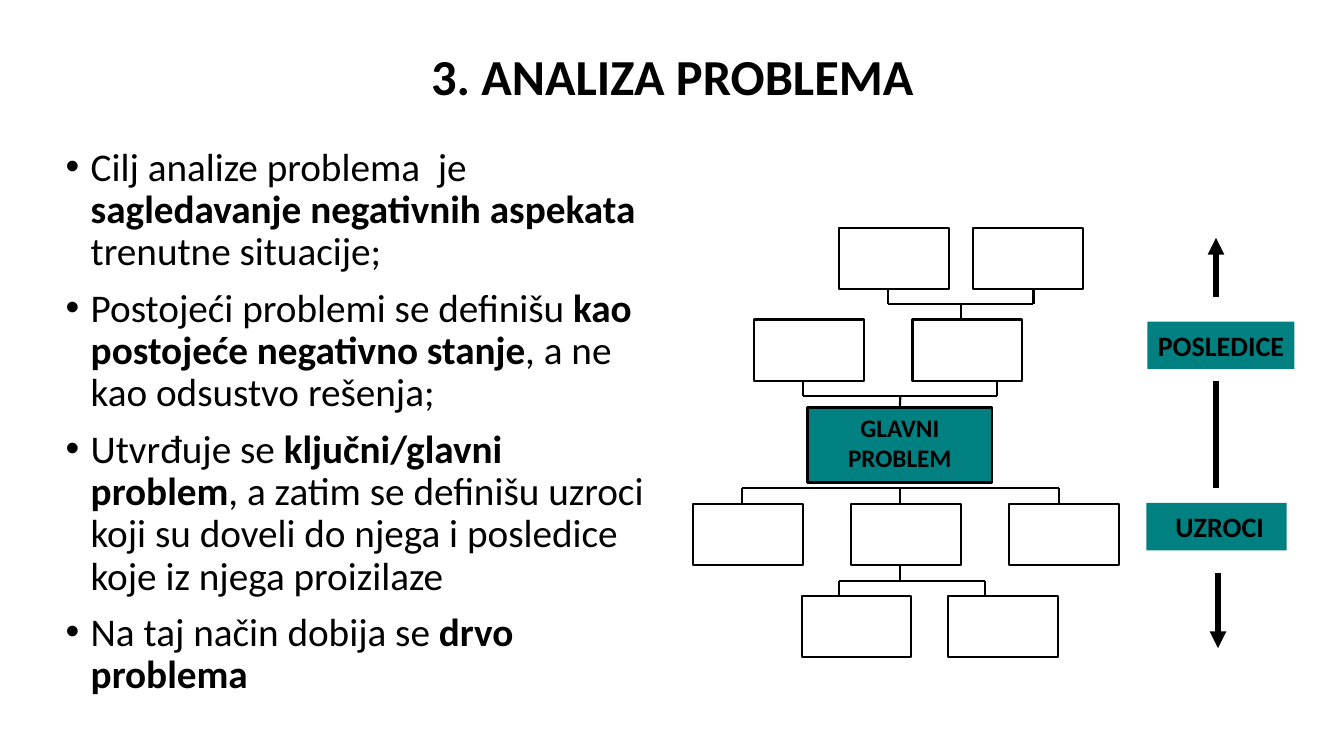
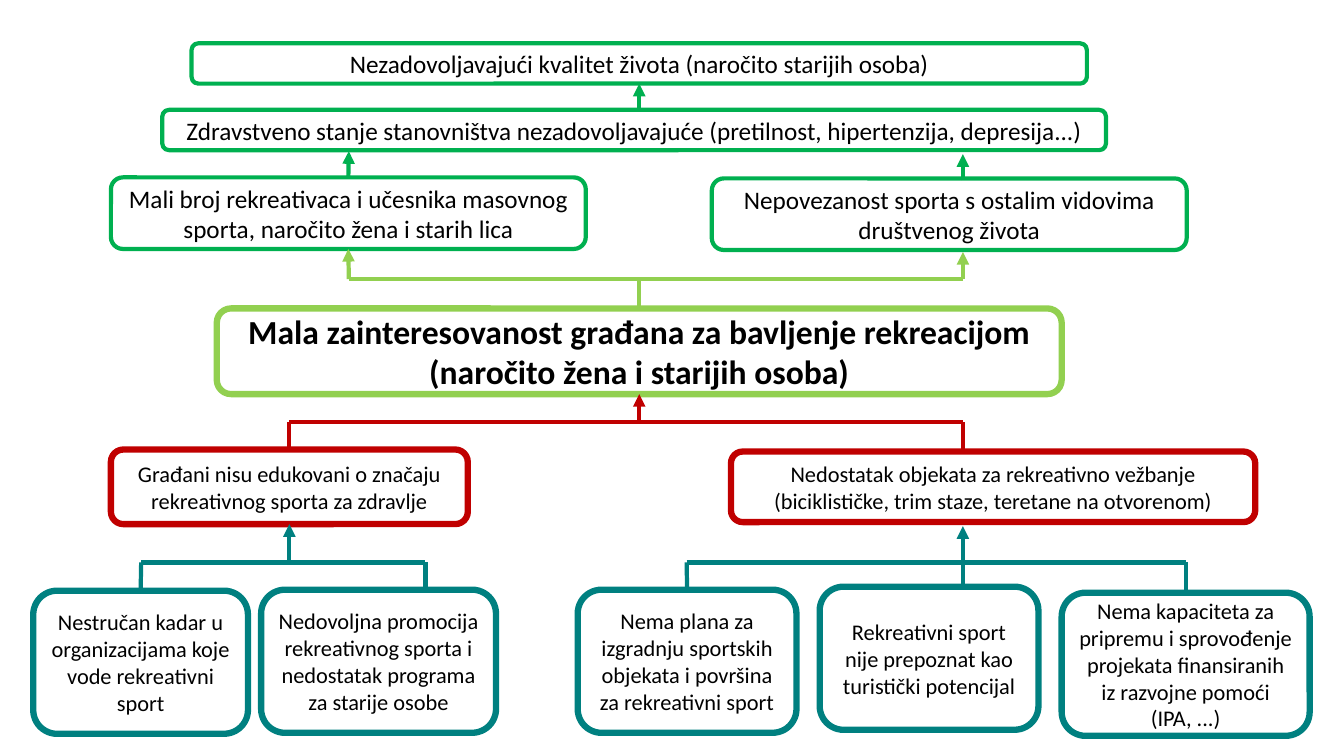
from pptx import Presentation
from pptx.dml.color import RGBColor
from pptx.enum.shapes import MSO_CONNECTOR, MSO_SHAPE, MSO_SHAPE_TYPE
from pptx.enum.text import MSO_ANCHOR, MSO_AUTO_SIZE, PP_ALIGN
from pptx.oxml.ns import qn
from pptx.util import Inches, Pt
from lxml.etree import SubElement

COLORS = {
    "black": "000000",
    "white": "FFFFFF",
    "teal": "008080",
    "red": "C00000",
    "lime": "92D050",
    "green": "00B050",
}
FONT = "Calibri"
JOIN_DISTANCE = Inches(0.045)


def add_box(page, kind, place, text="", fill=None, line=None, width=1.5, size=18, bold=False):
    box = page.shapes.add_shape(kind, *[Inches(value) for value in place])
    box.shadow.inherit = False
    if fill:
        box.fill.solid()
        box.fill.fore_color.rgb = RGBColor.from_string(COLORS[fill])
    else:
        box.fill.background()
    if line:
        box.line.color.rgb = RGBColor.from_string(COLORS[line])
        box.line.width = Pt(width)
    else:
        box.line.fill.background()
    if text:
        box.text_frame.text = text
        for para in box.text_frame.paragraphs:
            para.alignment = PP_ALIGN.CENTER
            para.font.name = FONT
            para.font.size = Pt(size)
            para.font.bold = bold
            para.font.color.rgb = RGBColor.from_string(COLORS["black"])
    return box


def add_line(page, start, end, color, width, arrow=False):
    ends = [Inches(value) for value in (*start, *end)]
    line = page.shapes.add_connector(MSO_CONNECTOR.STRAIGHT, *ends)
    line.line.color.rgb = RGBColor.from_string(COLORS[color])
    line.line.width = Pt(width)
    properties = line._element.spPr
    if arrow:
        SubElement(properties.find(qn("a:ln")), qn("a:tailEnd"), type="triangle")
    SubElement(properties, qn("a:effectLst"))
    for box in page.shapes:
        if box.shape_type != MSO_SHAPE_TYPE.AUTO_SHAPE:
            continue
        middle = box.left + box.width // 2
        for site, side in ((0, box.top), (2, box.top + box.height)):
            for x, y, connect in ((*ends[:2], line.begin_connect), (*ends[2:], line.end_connect)):
                if abs(x - middle) < JOIN_DISTANCE and abs(y - side) < JOIN_DISTANCE:
                    connect(box, site)


deck = Presentation()
deck.slide_width = Inches(13.33)
deck.slide_height = Inches(7.5)
analysis = deck.slides.add_slide(deck.slide_layouts[1])
tree = deck.slides.add_slide(deck.slide_layouts[6])

title, body = analysis.placeholders
for holder, place in ((title, (0.92, 0.4, 11.5, 0.78)), (body, (0.55, 1.41, 5.95, 5.7))):
    holder.left, holder.top, holder.width, holder.height = [Inches(value) for value in place]
    holder.text_frame.auto_size = MSO_AUTO_SIZE.NONE

title.text_frame.text = "3. ANALIZA PROBLEMA"
title.text_frame.vertical_anchor = MSO_ANCHOR.MIDDLE
heading = title.text_frame.paragraphs[0]
heading.alignment = PP_ALIGN.CENTER
heading.line_spacing = 0.9
heading.font.name = FONT
heading.font.size = Pt(36)
heading.font.bold = True
heading.font.color.rgb = RGBColor.from_string(COLORS["black"])

points = [
    ("Cilj analize problema  je ", "sagledavanje negativnih aspekata", " trenutne situacije;"),
    ("Postojeći problemi se definišu ", "kao postojeće negativno stanje", ", a ne kao odsustvo rešenja;"),
    (
        "Utvrđuje se ",
        "ključni/glavni problem",
        ", a zatim se definišu uzroci koji su doveli do njega i posledice koje iz njega proizilaze",
    ),
    ("Na taj način dobija se ", "drvo problema"),
]
for number, parts in enumerate(points):
    para = body.text_frame.add_paragraph() if number else body.text_frame.paragraphs[0]
    para.line_spacing = 0.9
    para.space_before = Pt(10)
    indent = para._p.get_or_add_pPr()
    indent.set("marL", str(Inches(0.25)))
    indent.set("indent", str(-Inches(0.25)))
    for position, part in enumerate(parts):
        span = para.add_run()
        span.text = part
        span.font.name = FONT
        span.font.size = Pt(28)
        span.font.bold = position == 1
        span.font.color.rgb = RGBColor.from_string(COLORS["black"])

empty_rows = [
    (2.26, (8.32, 9.65)),
    (3.17, (7.48, 9.05)),
    (5, (6.87, 8.44, 10.01)),
    (5.91, (7.95, 9.4)),
]
for top, lefts in empty_rows:
    for left in lefts:
        add_box(analysis, MSO_SHAPE.RECTANGLE, (left, top, 1.09, 0.61), fill="white", line="black")

core = add_box(analysis, MSO_SHAPE.RECTANGLE, (8.01, 4.04, 1.83, 0.75), "GLAVNI\nPROBLEM",
               fill="teal", line="black", width=2, bold=True)
core.text_frame.vertical_anchor = MSO_ANCHOR.TOP

labels = [("POSLEDICE", (11.38, 3.19, 1.46, 0.47)), (" UZROCI", (11.37, 4.99, 1.39, 0.47))]
for text, place in labels:
    label = add_box(analysis, MSO_SHAPE.RECTANGLE, place, text, fill="teal", size=20, bold=True)
    label.text_frame.word_wrap = False

tree_levels = [
    ("green", 3, 18, False, [
        ((1.9, 0.43, 8.88, 0.4), "Nezadovoljavajući kvalitet života (naročito starijih osoba)"),
        ((1.61, 1.09, 9.36, 0.4),
         "Zdravstveno stanje stanovništva nezadovoljavajuće (pretilnost, hipertenzija, depresija...)"),
        ((1.1, 1.76, 4.71, 0.71),
         "Mali broj rekreativaca i učesnika masovnog sporta, naročito žena i starih lica"),
        ((7.06, 1.77, 4.71, 0.71), "Nepovezanost sporta s ostalim vidovima društvenog života"),
    ]),
    ("lime", 4.5, 24, True, [
        ((2.15, 3.06, 8.38, 0.85),
         "Mala zainteresovanost građana za bavljenje rekreacijom (naročito žena i starijih osoba)"),
    ]),
    ("red", 4.5, 16, False, [
        ((1.1, 4.46, 3.54, 0.74), "Građani nisu edukovani o značaju rekreativnog sporta za zdravlje"),
        ((7.25, 4.48, 5.2, 0.7),
         "Nedostatak objekata za rekreativno vežbanje (biciklističke, trim staze, teretane na otvorenom)"),
    ]),
    ("teal", 4.5, 16, False, [
        ((0.33, 5.86, 2.13, 1.42), "Nestručan kadar u organizacijama koje vode rekreativni sport"),
        ((2.59, 5.85, 2.33, 1.42),
         "Nedovoljna promocija rekreativnog sporta i nedostatak programa za starije osobe"),
        ((5.73, 5.85, 2.17, 1.42),
         "Nema plana za izgradnju sportskih objekata i površina za rekreativni sport"),
        ((8.13, 5.82, 2.17, 1.42), "Rekreativni sport nije prepoznat kao turistički potencijal"),
        ((10.53, 5.88, 2.46, 1.42),
         "Nema kapaciteta za pripremu i sprovođenje projekata finansiranih iz razvojne pomoći (IPA, ...)"),
    ]),
]
for color, width, size, bold, entries in tree_levels:
    for place, text in entries:
        box = add_box(tree, MSO_SHAPE.ROUNDED_RECTANGLE, place, text,
                      line=color, width=width, size=size, bold=bold)
        box.text_frame.vertical_anchor = MSO_ANCHOR.MIDDLE

forks = [
    (analysis, "black", 1.5, 3.02, (8.81, 10.25), 2.87, (9.53, 3.17), None),
    (analysis, "black", 1.5, 3.93, (7.96, 9.89), 3.78, (8.93, 4.08), None),
    (analysis, "black", 1.5, 4.84, (7.36, 10.5), 5, (8.93, 5), None),
    (analysis, "black", 1.5, 5.76, (8.32, 9.77), 5.91, (8.93, 5.6), None),
    (tree, "lime", 3, 2.77, (3.46, 9.55), 2.5, (6.34, 3.06), "branches"),
    (tree, "red", 3, 4.19, (2.87, 9.55), 4.45, (6.34, 3.88), "stem"),
    (tree, "teal", 3, 5.58, (1.4, 4.22), 5.86, (2.87, 5.2), "stem"),
    (tree, "teal", 3, 5.58, (6.81, 11.76), 5.86, (9.55, 5.22), "stem"),
]
for page, color, width, level, branches, branch_end, stem, arrows in forks:
    add_line(page, (branches[0], level), (branches[1], level), color, width)
    for x in branches:
        add_line(page, (x, level), (x, branch_end), color, width, arrows == "branches")
    add_line(page, (stem[0], level), stem, color, width, arrows == "stem")

single_lines = [
    (analysis, (12.06, 2.95), (12.06, 2.36), "black", 4, True),
    (analysis, (12.06, 3.78), (12.06, 4.84), "black", 4, False),
    (analysis, (12.08, 5.68), (12.08, 6.43), "black", 4, True),
    (tree, (6.34, 1.08), (6.34, 0.82), "green", 3, True),
    (tree, (3.46, 1.76), (3.46, 1.5), "green", 3, True),
    (tree, (9.55, 1.79), (9.55, 1.53), "green", 3, True),
    (tree, (9.55, 5.84), (9.55, 5.58), "teal", 3, False),
]
for single_line in single_lines:
    add_line(*single_line)

deck.save("out.pptx")
